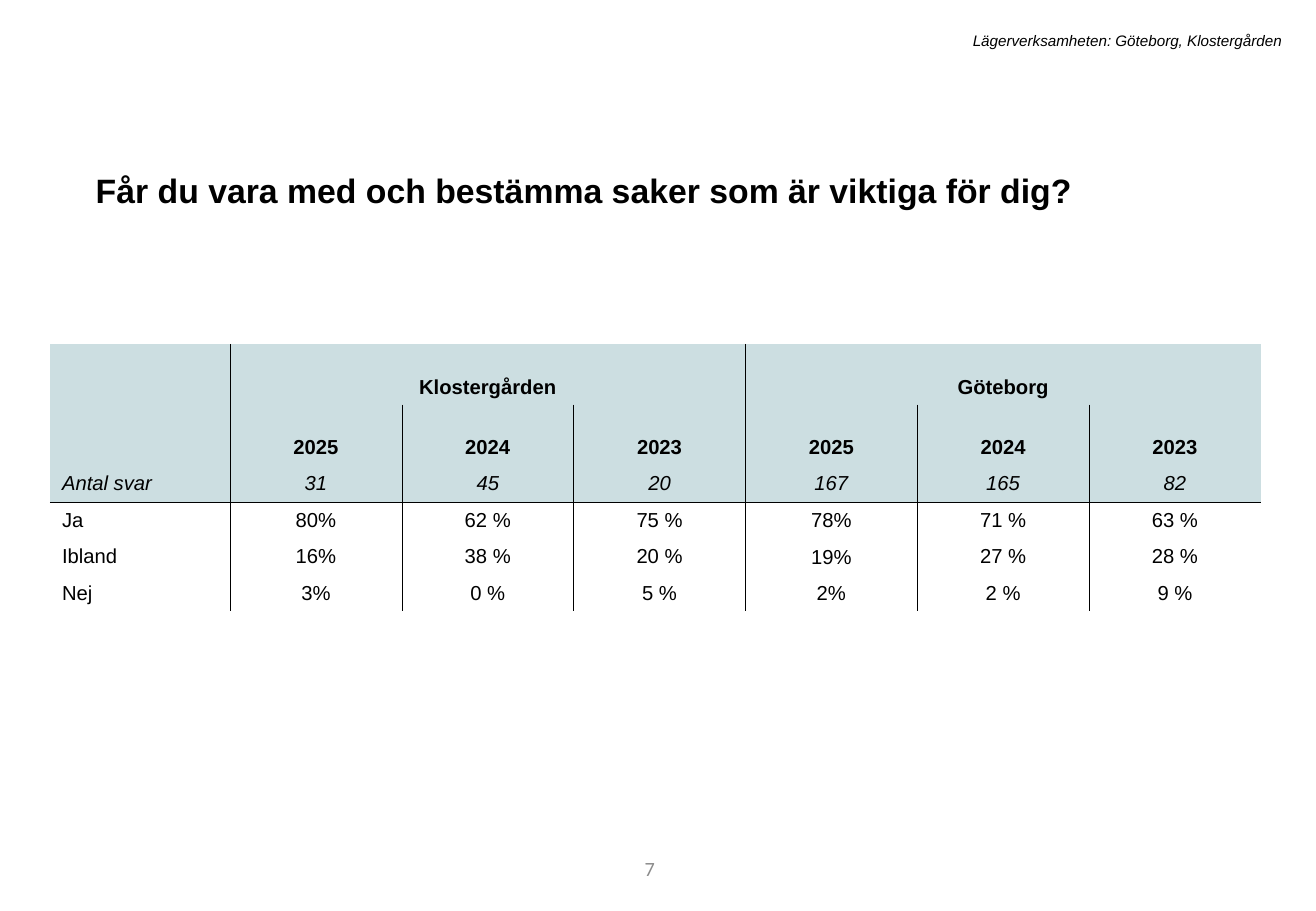
from lxml import etree
from pptx import Presentation
from pptx import util as u
from pptx.dml import color
from pptx.enum import text
from pptx.oxml import ns

BLACK, GREY, HEADER_FILL = "000000", "8C8C8C", "CCDEE1"
LEFT, CENTER, RIGHT = text.PP_ALIGN.LEFT, text.PP_ALIGN.CENTER, text.PP_ALIGN.RIGHT
MIDDLE, BOTTOM = text.MSO_ANCHOR.MIDDLE, text.MSO_ANCHOR.BOTTOM
GROUP_STARTS, GROUP_SIZE = (1, 4), 3
HEADER_ROWS = 3

SURVEY_ROWS = [
    ["", "Klostergården", "", "", "Göteborg", "", ""],
    ["", "2025", "2024", "2023", "2025", "2024", "2023"],
    ["Antal svar", "31", "45", "20", "167", "165", "82"],
    ["Ja", "80%", "62 %", "75 %", "78%", "71 %", "63 %"],
    ["Ibland", "16%", "38 %", "20 %", "19%", "27 %", "28 %"],
    ["Nej", "3%", "0 %", "5 %", "2%", "2 %", "9 %"],
]


def rgb(value):
    return color.RGBColor.from_string(value)


def set_all(target, values):
    for name, value in values.items():
        setattr(target, name, value)


def has_divider(row, edge):
    """Tell whether a vertical line runs along the left of column `edge`."""
    return edge in GROUP_STARTS or (row > 0 and 0 < edge < len(SURVEY_ROWS[0]))


class SlideBuilder:
    font = "Arial"
    line_width = 0.25

    def __init__(self, deck):
        self.page = deck.slides.add_slide(deck.slide_layouts[6])

    def add_words(self, frame, words, size, ink=BLACK, font=None, bold=False,
                  italic=False, **para_format):
        para = frame.paragraphs[0]
        set_all(para, para_format)
        span = para.add_run()
        span.text = words
        set_all(span.font, {"name": font or self.font, "size": u.Pt(size),
                            "bold": bold, "italic": italic})
        span.font.color.rgb = rgb(ink)

    def text_box(self, place, words, size, frame_format=None, **style):
        box = self.page.shapes.add_textbox(*map(u.Pt, place))
        box.text_frame.word_wrap = True
        set_all(box.text_frame, frame_format or {})
        self.add_words(box.text_frame, words, size, **style)

    def borders(self, cell, visible):
        """Draw the visible sides of a cell and clear the others."""
        properties = cell._tc.get_or_add_tcPr()
        for side in "LRTB":
            line = etree.SubElement(properties, ns.qn(f"a:ln{side}"),
                                    w=str(u.Pt(self.line_width)))
            if side in visible:
                fill = etree.SubElement(line, ns.qn("a:solidFill"))
                etree.SubElement(fill, ns.qn("a:srgbClr"), val=BLACK)
            else:
                etree.SubElement(line, ns.qn("a:noFill"))

    def survey_cell(self, cell, row, column, words):
        merged = row == 0 and column in GROUP_STARTS
        right_edge = column + (GROUP_SIZE if merged else 1)
        sides = {"L": has_divider(row, column), "R": has_divider(row, right_edge),
                 "T": row == HEADER_ROWS, "B": row == HEADER_ROWS - 1}
        self.borders(cell, [side for side, shown in sides.items() if shown])
        if row < HEADER_ROWS:
            cell.fill.solid()
            cell.fill.fore_color.rgb = rgb(HEADER_FILL)
        else:
            cell.fill.background()
        cell.vertical_anchor = BOTTOM if row < 2 else MIDDLE
        if row >= HEADER_ROWS and column == GROUP_STARTS[1]:
            set_all(cell, {"margin_left": u.Pt(0.7), "margin_right": u.Pt(0.7),
                           "margin_top": u.Pt(0.7), "margin_bottom": 0})
        if words:
            self.add_words(cell.text_frame, words, 12, bold=row < 2, italic=row == 2,
                           alignment=CENTER if column else LEFT)

    def survey_table(self, place, widths, heights):
        frame = self.page.shapes.add_table(len(heights), len(widths), *map(u.Pt, place))
        table = frame.table
        set_all(table, {"first_row": False, "horz_banding": False})
        for column, width in zip(table.columns, widths):
            column.width = u.Pt(width)
        for row, height in zip(table.rows, heights):
            row.height = u.Pt(height)
        for start in GROUP_STARTS:
            table.cell(0, start).merge(table.cell(0, start + GROUP_SIZE - 1))
        for row, values in enumerate(SURVEY_ROWS):
            for column, words in enumerate(values):
                self.survey_cell(table.cell(row, column), row, column, words)


def main():
    deck = Presentation()
    set_all(deck, {"slide_width": u.Pt(780), "slide_height": u.Pt(540)})
    slide = SlideBuilder(deck)
    grow = {"auto_size": text.MSO_AUTO_SIZE.SHAPE_TO_FIT_TEXT}

    slide.text_box((219.6, 500.4, 175.7, 28.8), "7", 12, {"vertical_anchor": MIDDLE},
                   ink=GREY, font="Calibri", alignment=RIGHT)
    slide.text_box((49.7, 92.2, 676.8, 33.8),
                   "Får du vara med och bestämma saker som är viktiga för dig?", 20, grow,
                   bold=True, line_spacing=1.2, space_before=u.Pt(10))
    slide.text_box((128.9, 15.1, 637.9, 18), "Lägerverksamheten: Göteborg, Klostergården",
                   9, grow, italic=True, alignment=RIGHT)
    slide.survey_table((29.6, 203.8, 717.8, 158.4), [106.8] + [101.83] * 6,
                       [36] * 2 + [21.6] * 4)
    deck.save("out.pptx")


if __name__ == "__main__":
    main()
